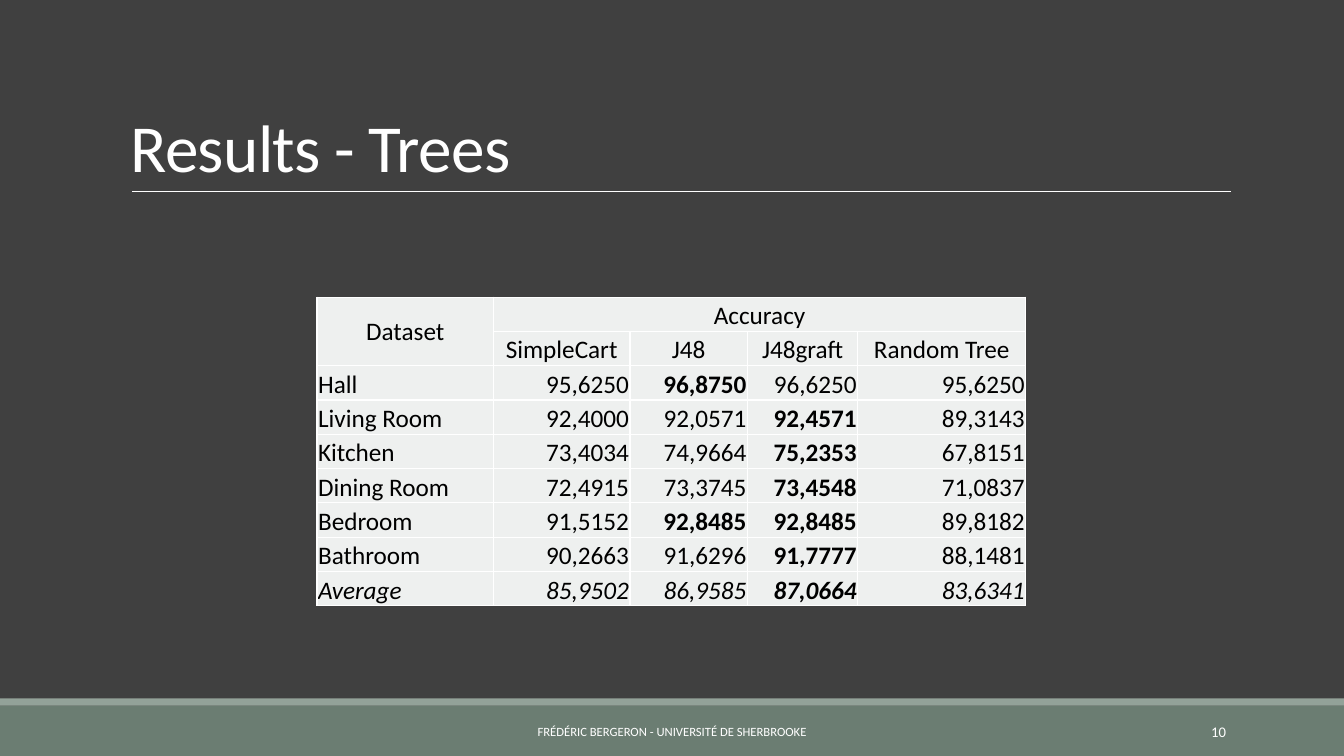
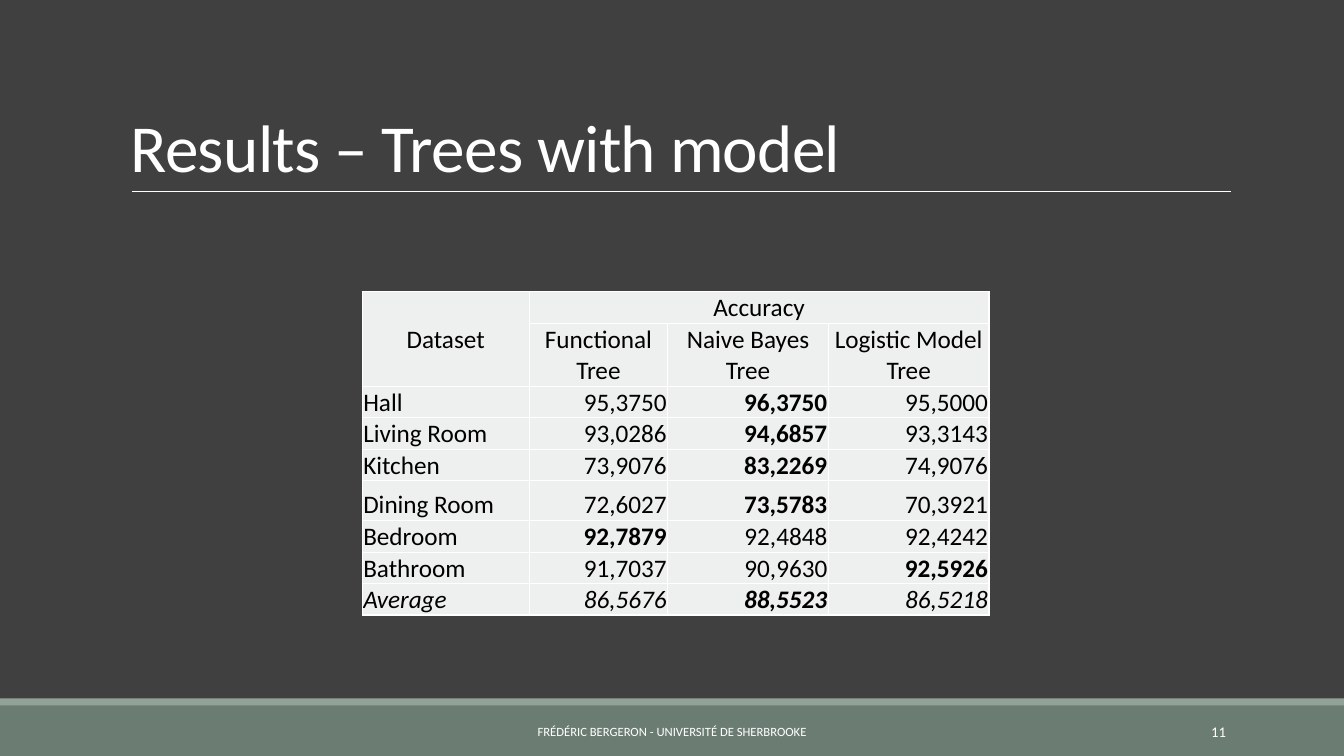
from dataclasses import dataclass

from lxml.etree import SubElement
from pptx import Presentation
from pptx.dml.color import RGBColor
from pptx.enum.shapes import MSO_CONNECTOR, MSO_SHAPE
from pptx.enum.text import MSO_ANCHOR, PP_ALIGN
from pptx.oxml.ns import qn
from pptx.util import Pt


@dataclass(frozen=True)
class Theme:
    background: str = "404040"
    footer_band: str = "6B7D72"
    accent_band: str = "93A299"
    light: str = "FFFFFF"
    dark: str = "000000"
    cell: str = "EEF0EF"
    font: str = "Calibri"
    title_size: float = 48
    table_size: float = 18
    footer_size: float = 9
    number_size: float = 10.5


theme = Theme()
PIXEL = 9525
WIDTH, HEIGHT = 1280, 720
FOOTER = "FRÉDÉRIC BERGERON - UNIVERSITÉ DE SHERBROOKE"
BANDS = [
    ((0, 672, WIDTH, 48), theme.footer_band),
    ((0, 665, WIDTH, 7), theme.accent_band),
]
CELL_FORMAT = {
    "margin_left": PIXEL,
    "margin_right": PIXEL,
    "margin_top": PIXEL,
    "margin_bottom": 0,
    "vertical_anchor": MSO_ANCHOR.BOTTOM,
}

PAGES = [
    {
        "number": "10",
        "title": "Results - Trees",
        "origin": (302, 283),
        "columns": [168, 130, 112, 105, 160],
        "height": 294,
        "tall_rows": {},
        "models": ["SimpleCart", "J48", "J48graft", "Random Tree"],
        "results": [
            ["Hall", "95,6250", "96,8750", "96,6250", "95,6250"],
            ["Living Room", "92,4000", "92,0571", "92,4571", "89,3143"],
            ["Kitchen", "73,4034", "74,9664", "75,2353", "67,8151"],
            ["Dining Room", "72,4915", "73,3745", "73,4548", "71,0837"],
            ["Bedroom", "91,5152", "92,8485", "92,8485", "89,8182"],
            ["Bathroom", "90,2663", "91,6296", "91,7777", "88,1481"],
            ["Average", "85,9502", "86,9585", "87,0664", "83,6341"],
        ],
    },
    {
        "number": "11",
        "title": "Results – Trees with model",
        "origin": (345, 278),
        "columns": [159, 132, 153, 153],
        "height": 270,
        "tall_rows": {1: 60, 5: 38},
        "models": ["Functional Tree", "Naive Bayes Tree", "Logistic Model Tree"],
        "results": [
            ["Hall", "95,3750", "96,3750", "95,5000"],
            ["Living Room", "93,0286", "94,6857", "93,3143"],
            ["Kitchen", "73,9076", "83,2269", "74,9076"],
            ["Dining Room", "72,6027", "73,5783", "70,3921"],
            ["Bedroom", "92,7879", "92,4848", "92,4242"],
            ["Bathroom", "91,7037", "90,9630", "92,5926"],
            ["Average", "86,5676", "88,5523", "86,5218"],
        ],
    },
]


def write_text(frame, text, size, color, alignment, **styles):
    para = frame.paragraphs[0]
    para.alignment = alignment
    span = para.add_run()
    span.text = text
    span.font.color.rgb = RGBColor.from_string(color)
    formats = {"name": theme.font, "size": Pt(size), **styles}
    for name, value in formats.items():
        setattr(span.font, name, value)
    return para, span


def add_text_box(page, bounds, text, size, alignment, anchor):
    box = page.shapes.add_textbox(*[length * PIXEL for length in bounds])
    box.text_frame.word_wrap = True
    box.text_frame.vertical_anchor = anchor
    return write_text(box.text_frame, text, size, theme.light, alignment)


deck = Presentation()
deck.slide_width = WIDTH * PIXEL
deck.slide_height = HEIGHT * PIXEL
background = deck.slide_master.background.fill
background.solid()
background.fore_color.rgb = RGBColor.from_string(theme.background)

for content in PAGES:
    page = deck.slides.add_slide(deck.slide_layouts[6])

    for bounds, color in BANDS:
        band = page.shapes.add_shape(
            MSO_SHAPE.RECTANGLE, *[length * PIXEL for length in bounds]
        )
        band.shadow.inherit = False
        band.fill.solid()
        band.fill.fore_color.rgb = RGBColor.from_string(color)
        band.line.fill.background()

    rule = page.shapes.add_connector(
        MSO_CONNECTOR.STRAIGHT, *[length * PIXEL for length in (126, 182, 1172, 182)]
    )
    rule.line.color.rgb = RGBColor.from_string(theme.light)
    rule.line.width = Pt(0.5)
    SubElement(rule._element.spPr, qn("a:effectLst"))

    para, span = add_text_box(
        page, (115, 30, 1056, 152), content["title"], theme.title_size,
        PP_ALIGN.LEFT, MSO_ANCHOR.BOTTOM,
    )
    para.line_spacing = 0.85
    span.font._element.set("spc", "-50")

    header = ["Dataset", "Accuracy"] + [""] * (len(content["models"]) - 1)
    rows = [header, ["", *content["models"]], *content["results"]]
    columns = content["columns"]
    left, top = content["origin"]
    table = page.shapes.add_table(
        len(rows), len(columns),
        left * PIXEL, top * PIXEL, sum(columns) * PIXEL, content["height"] * PIXEL,
    ).table
    table.first_row = False
    table.horz_banding = False
    for column, width in zip(table.columns, columns):
        column.width = width * PIXEL
    for index, height in content["tall_rows"].items():
        table.rows[index].height = height * PIXEL

    for row_index, row in enumerate(rows):
        for column_index, text in enumerate(row):
            cell = table.cell(row_index, column_index)
            for name, value in CELL_FORMAT.items():
                setattr(cell, name, value)
            properties = cell._tc.get_or_add_tcPr()
            for side in ("a:lnL", "a:lnR", "a:lnT", "a:lnB"):
                border = SubElement(properties, qn(side), w=str(Pt(1)))
                border_fill = SubElement(border, qn("a:solidFill"))
                SubElement(border_fill, qn("a:srgbClr"), val=theme.light)
            cell.fill.solid()
            cell.fill.fore_color.rgb = RGBColor.from_string(theme.cell)
            if not text:
                continue
            is_header = row_index < 2
            if is_header:
                alignment = PP_ALIGN.CENTER
            else:
                alignment = PP_ALIGN.RIGHT if column_index else PP_ALIGN.LEFT
            write_text(
                cell.text_frame, text, theme.table_size, theme.dark, alignment,
                bold=not is_header and text == max(row[1:]),
                italic=row[0] == "Average",
            )

    table.cell(0, 0).merge(table.cell(1, 0))
    table.cell(0, 0).vertical_anchor = MSO_ANCHOR.MIDDLE
    table.cell(0, 1).merge(table.cell(0, len(columns) - 1))

    add_text_box(
        page, (387, 678, 506, 38), FOOTER, theme.footer_size,
        PP_ALIGN.CENTER, MSO_ANCHOR.MIDDLE,
    )
    add_text_box(
        page, (1040, 678, 137, 38), content["number"], theme.number_size,
        PP_ALIGN.RIGHT, MSO_ANCHOR.MIDDLE,
    )

deck.save("out.pptx")
